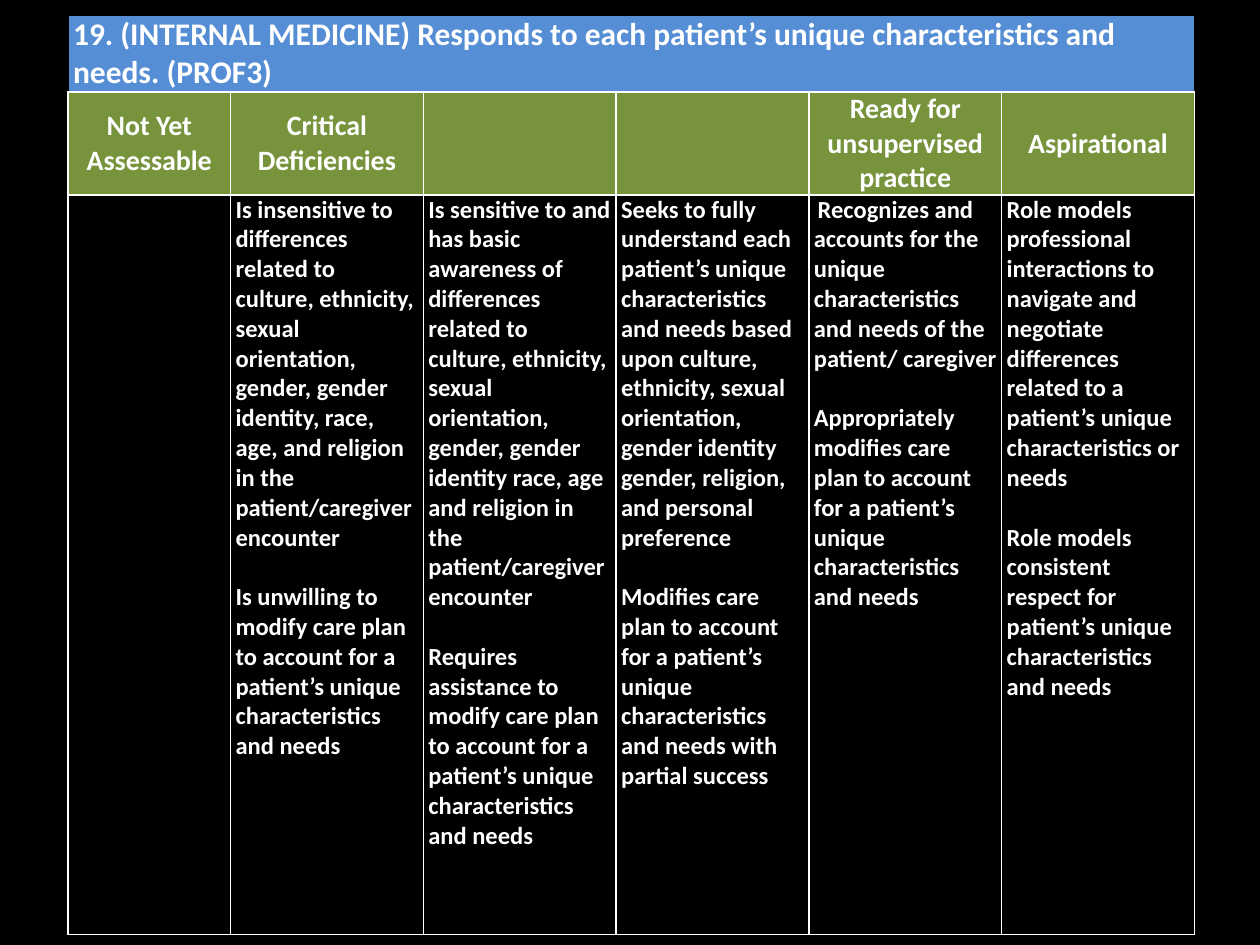
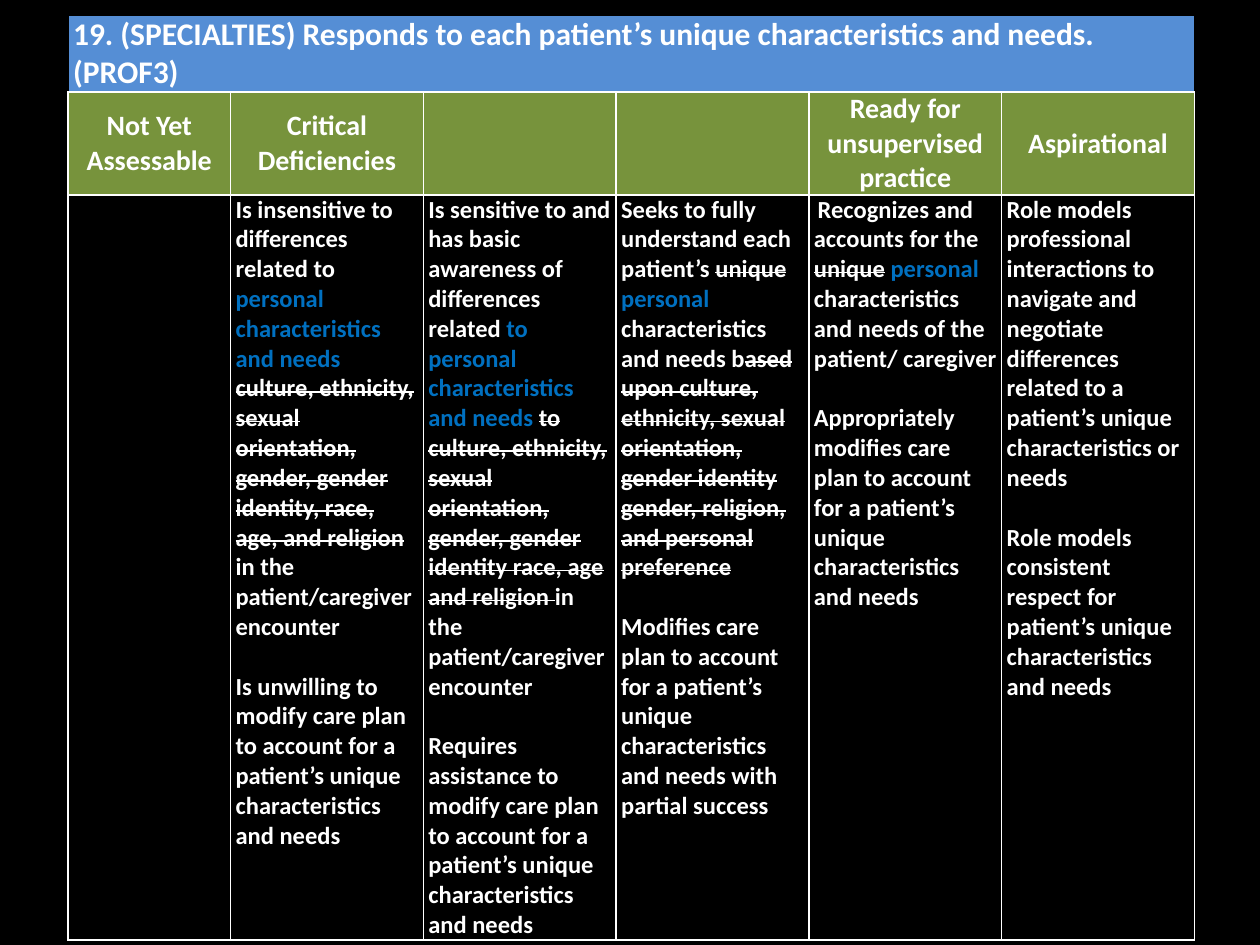
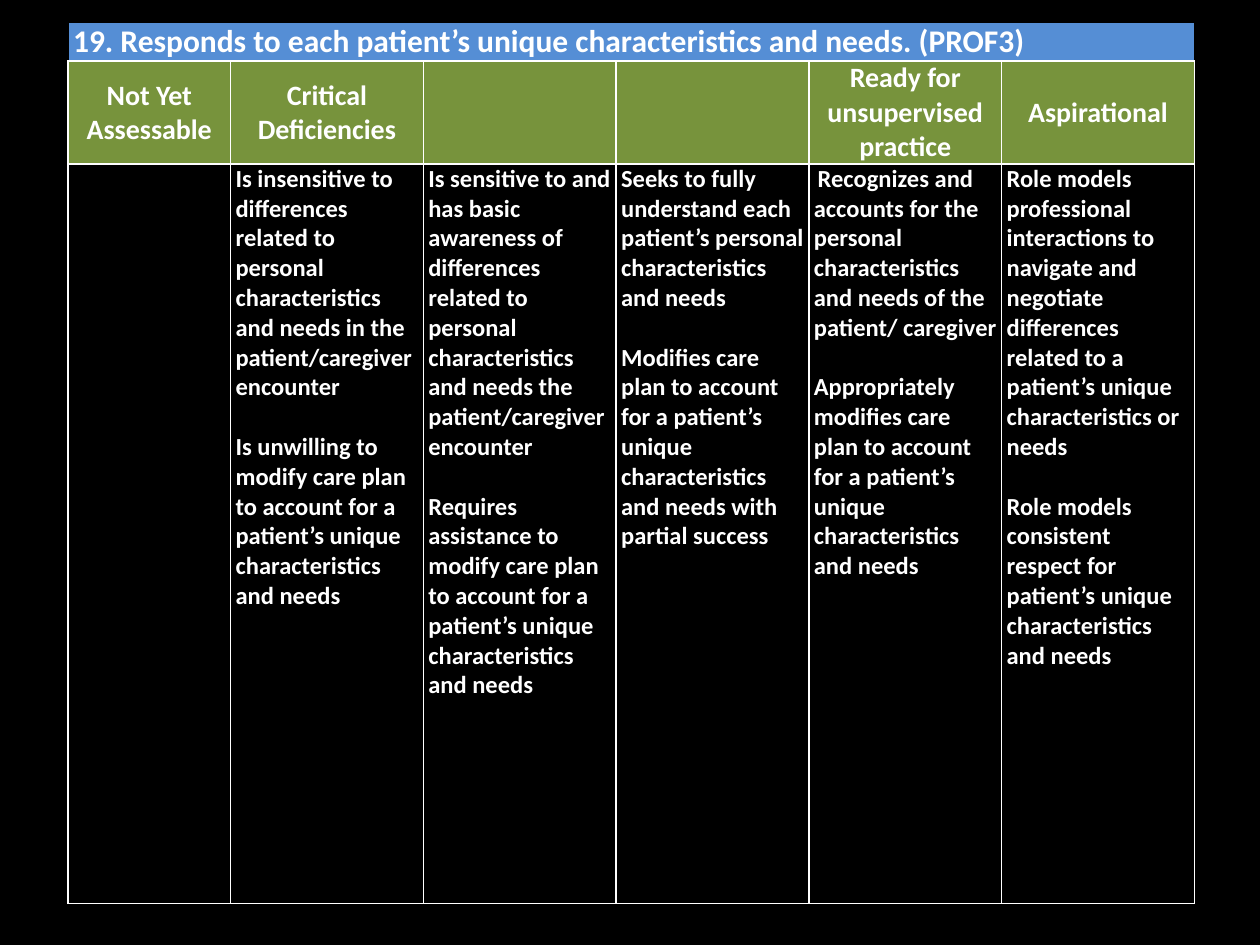
from lxml.etree import SubElement
from pptx import Presentation
from pptx.dml.color import RGBColor
from pptx.enum.text import MSO_ANCHOR, PP_ALIGN
from pptx.oxml.ns import qn
from pptx.util import Inches, Pt

BLACK = RGBColor(0x00, 0x00, 0x00)
WHITE = RGBColor(0xFF, 0xFF, 0xFF)
TITLE_BLUE = RGBColor(0x55, 0x8E, 0xD5)
LEVEL_GREEN = RGBColor(0x77, 0x93, 0x3C)
ADDED_BLUE = RGBColor(0x00, 0x70, 0xC0)
FONT = "Calibri"
PLAIN, ADDED, STRUCK = "plain", "added", "struck"

LEVELS = ["Not Yet Assessable", "Critical Deficiencies", "", "",
          "Ready for unsupervised practice", "Aspirational"]

CARE_PLAN = [
    "Is unwilling to modify care plan to account for a patient’s unique characteristics and needs",
    "Requires assistance to modify care plan to account for a patient’s unique characteristics and needs",
    "Modifies care plan to account for a patient’s unique characteristics and needs with partial success",
    "Appropriately modifies care plan to account for a patient’s unique characteristics and needs",
    "Role models consistent respect for patient’s unique characteristics and needs",
]

ROLE_MODEL = ("Role models professional interactions to navigate and negotiate differences "
              "related to a patient’s unique characteristics or needs")

MILESTONES = [
    {
        "title": "19. (INTERNAL MEDICINE) Responds to each patient’s unique characteristics and needs. (PROF3)",
        "top": 0.12,
        "rows": [0.29, 0.77, 5.87],
        "awareness": [
            "Is insensitive to differences related to culture, ethnicity, sexual orientation, gender, "
            "gender identity, race, age, and religion in the patient/caregiver encounter",
            "Is sensitive to and has basic awareness of differences related to culture, ethnicity, sexual "
            "orientation, gender, gender identity race, age and religion in the patient/caregiver encounter",
            "Seeks to fully understand each patient’s unique characteristics and needs based upon culture, "
            "ethnicity, sexual orientation, gender identity gender, religion, and personal preference",
            "Recognizes and accounts for the unique characteristics and needs of the patient/ caregiver",
            ROLE_MODEL,
        ],
    },
    {
        "title": "19. (SPECIALTIES) Responds to each patient’s unique characteristics and needs. (PROF3)",
        "top": 0.12,
        "rows": [0.29, 0.77, 5.87],
        "awareness": [
            [("Is insensitive to differences related to ", PLAIN),
             ("personal characteristics and needs ", ADDED),
             ("culture, ethnicity, sexual orientation, gender, gender identity, race, age, and religion ",
              STRUCK),
             ("in the patient/caregiver encounter", PLAIN)],
            [("Is sensitive to and has basic awareness of differences related ", PLAIN),
             ("to personal characteristics and needs ", ADDED),
             ("to culture, ethnicity, sexual orientation, gender, gender identity race, age and religion ",
              STRUCK),
             ("in the patient/caregiver encounter", PLAIN)],
            [("Seeks to fully understand each patient’s ", PLAIN),
             ("unique", STRUCK),
             (" ", PLAIN),
             ("personal ", ADDED),
             ("characteristics and needs b", PLAIN),
             ("ased upon culture, ethnicity, sexual orientation, gender identity gender, religion, "
              "and personal preference", STRUCK)],
            [("Recognizes and accounts for the ", PLAIN),
             ("unique", STRUCK),
             (" ", PLAIN),
             ("personal ", ADDED),
             ("characteristics and needs of the patient/ caregiver", PLAIN)],
            ROLE_MODEL,
        ],
    },
    {
        "title": "19. Responds to each patient’s unique characteristics and needs. (PROF3)",
        "top": 0.18,
        "rows": [0.3, 0.8, 5.87],
        "awareness": [
            "Is insensitive to differences related to personal characteristics and needs in the "
            "patient/caregiver encounter",
            "Is sensitive to and has basic awareness of differences related to personal characteristics "
            "and needs the patient/caregiver encounter",
            "Seeks to fully understand each patient’s personal characteristics and needs",
            "Recognizes and accounts for the personal characteristics and needs of the patient/ caregiver",
            ROLE_MODEL,
        ],
    },
]

GRID_LEFT = 0.54
COLUMN_WIDTHS = [1.29] + [1.53] * 5
SIDE_MARGIN = 0.04
READY_COLUMN = 4
READY_INDENT = 0.03
TITLE_SIZE, LEVEL_SIZE, BODY_SIZE = 18, 16, 14
PARAGRAPH_GAP = 17


def write(paragraph, content, size):
    paragraph.font.name = FONT
    paragraph.font.size = Pt(size)
    paragraph.font.bold = True
    for text, mark in [(content, PLAIN)] if isinstance(content, str) else content:
        run = paragraph.add_run()
        run.text = text
        run.font.color.rgb = ADDED_BLUE if mark == ADDED else WHITE
        if mark == STRUCK:
            run._r.get_or_add_rPr().set("strike", "sngStrike")


def format_cell(cell, fill, edge):
    cell.margin_left = cell.margin_right = Inches(SIDE_MARGIN)
    cell.margin_top = cell.margin_bottom = 0
    properties = cell._tc.get_or_add_tcPr()
    for side, color in (("L", edge), ("R", edge), ("T", edge), ("B", WHITE)):
        line = SubElement(properties, qn(f"a:ln{side}"), w=str(Pt(1)))
        SubElement(SubElement(line, qn("a:solidFill")), qn("a:srgbClr"), val=str(color))
    cell.fill.solid()
    cell.fill.fore_color.rgb = fill


def add_milestone(deck, milestone):
    slide = deck.slides.add_slide(deck.slide_layouts[6])
    rows = milestone["rows"]
    grid = slide.shapes.add_table(
        len(rows), len(LEVELS), Inches(GRID_LEFT), Inches(milestone["top"]),
        Inches(sum(COLUMN_WIDTHS)), Inches(sum(rows))).table
    grid.first_row = grid.horz_banding = False
    for column, width in zip(grid.columns, COLUMN_WIDTHS):
        column.width = Inches(width)
    row_styles = [(TITLE_BLUE, BLACK), (LEVEL_GREEN, WHITE), (BLACK, WHITE)]
    for index, (height, (fill, edge)) in enumerate(zip(rows, row_styles)):
        grid.rows[index].height = Inches(height)
        for cell in grid.rows[index].cells:
            format_cell(cell, fill, edge)

    banner = grid.cell(0, 0)
    banner.merge(grid.cell(0, len(LEVELS) - 1))
    write(banner.text_frame.paragraphs[0], milestone["title"], TITLE_SIZE)

    for column, level in enumerate(LEVELS):
        if level:
            heading = grid.cell(1, column)
            heading.vertical_anchor = MSO_ANCHOR.MIDDLE
            heading.text_frame.paragraphs[0].alignment = PP_ALIGN.CENTER
            write(heading.text_frame.paragraphs[0], level, LEVEL_SIZE)

    for column, (awareness, care_plan) in enumerate(zip(milestone["awareness"], CARE_PLAN), 1):
        frame = grid.cell(2, column).text_frame
        first = frame.paragraphs[0]
        write(first, awareness, BODY_SIZE)
        if column == READY_COLUMN:
            first._p.get_or_add_pPr().set("indent", str(Inches(READY_INDENT)))
        second = frame.add_paragraph()
        second.space_before = Pt(PARAGRAPH_GAP)
        write(second, care_plan, BODY_SIZE)


def main():
    deck = Presentation()
    deck.slide_width, deck.slide_height = Inches(10), Inches(7.5)
    backdrop = deck.slide_master.background.fill
    backdrop.solid()
    backdrop.fore_color.rgb = BLACK
    for milestone in MILESTONES:
        add_milestone(deck, milestone)
    deck.save("out.pptx")


if __name__ == "__main__":
    main()
